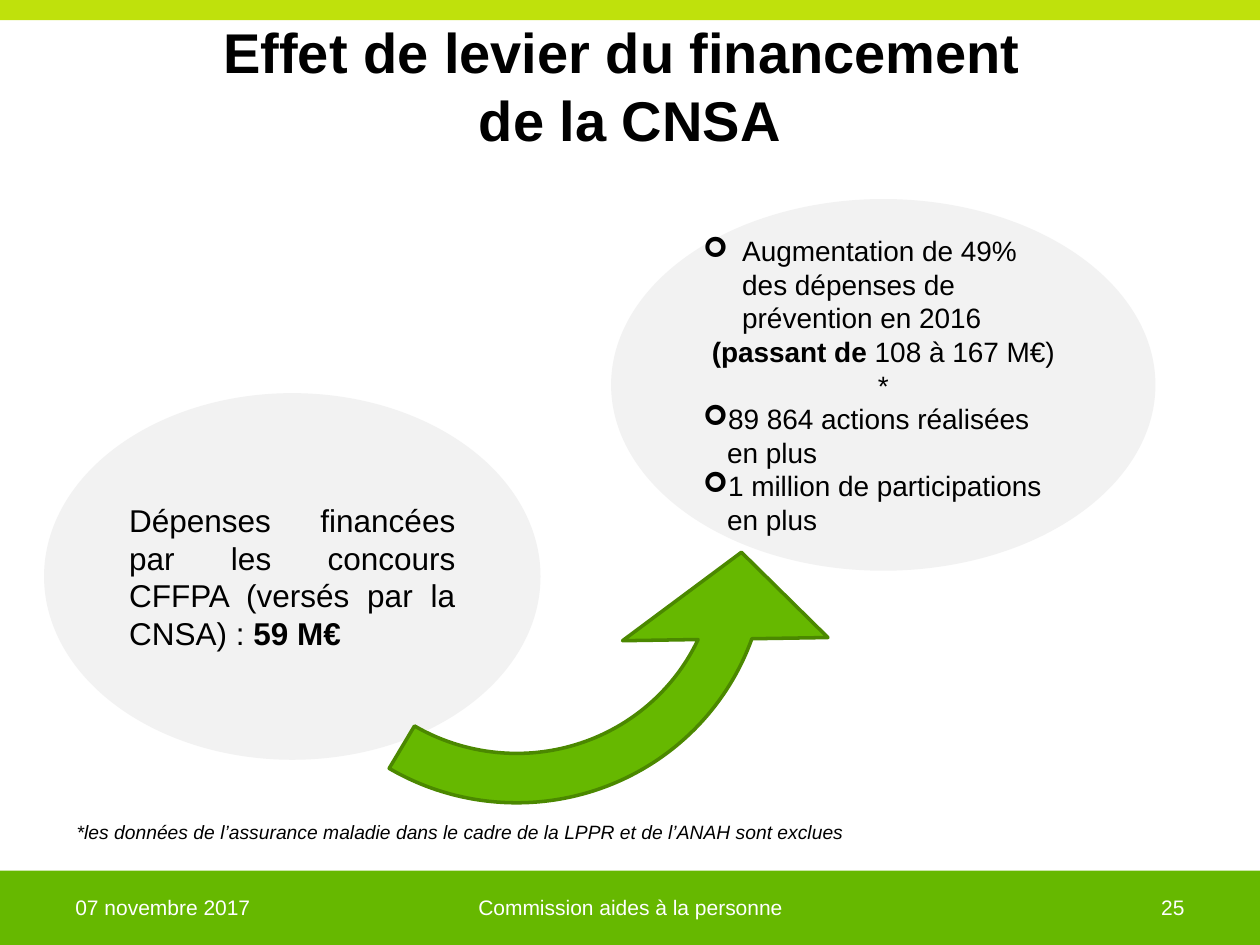
from lxml.etree import SubElement
from pptx import Presentation
from pptx.dml.color import RGBColor
from pptx.enum.shapes import MSO_SHAPE as Shape
from pptx.enum.text import MSO_ANCHOR as Anchor, PP_ALIGN as Align
from pptx.oxml.ns import qn
from pptx.util import Inches, Pt

LIME, GREEN, DARK = "BFE10C", "66B800", "4B8800"
GREY, BLACK, WHITE = "F2F2F2", "000000", "FFFFFF"


def color(code):
    return RGBColor.from_string(code)


def place(item, box):
    item.left, item.top, item.width, item.height = map(Inches, box)


def style(para, size, tone=BLACK, align=Align.LEFT, bold=None, italic=None):
    para.alignment = align
    for run in para.runs:
        font = run.font
        font.name, font.size = "Arial", Pt(size)
        font.color.rgb = color(tone)
        font.bold, font.italic = bold, italic


def add_shape(slide, kind, box, fill):
    shape = slide.shapes.add_shape(kind, *map(Inches, box))
    shape.shadow.inherit = False
    shape.fill.solid()
    shape.fill.fore_color.rgb = color(fill)
    shape.line.fill.background()
    return shape


def add_label(slide, box, text, size, **look):
    label = slide.shapes.add_textbox(*map(Inches, box))
    frame = label.text_frame
    frame.word_wrap = True
    frame.text = text
    style(frame.paragraphs[0], size, **look)


def add_bullet(para, indent):
    props = para._p.get_or_add_pPr()
    props.set("marL", str(Inches(indent)))
    props.set("indent", str(-Inches(indent)))
    SubElement(props, qn("a:buFont"), typeface="Wingdings")
    SubElement(props, qn("a:buChar"), char="➢")


def add_oval(slide, box, size, rows):
    """Each row holds its runs as (text, bold), its alignment and its bullet indent."""
    oval = add_shape(slide, Shape.OVAL, box, GREY)
    frame = oval.text_frame
    frame.word_wrap = True
    frame.vertical_anchor = Anchor.MIDDLE
    for i, (runs, align, indent) in enumerate(rows):
        para = frame.add_paragraph() if i else frame.paragraphs[0]
        for text, _ in runs:
            para.add_run().text = text
        style(para, size, align=align)
        for run, (_, bold) in zip(para.runs, runs):
            run.font.bold = bold
        if indent:
            add_bullet(para, indent)


def add_arrow(slide):
    arrow = add_shape(slide, Shape.CIRCULAR_ARROW, (1.49, 1.83, 5.21, 5.16), GREEN)
    for i, value in enumerate((0.076, 13.565, 206.383, 146.939, 0.158)):
        arrow.adjustments[i] = value
    arrow.rotation = 185.7
    arrow._element.spPr.find(qn("a:xfrm")).set("flipH", "1")
    arrow.line.color.rgb = color(DARK)
    arrow.line.width = Pt(2)


def set_title(slide, text):
    title = slide.shapes.title
    place(title, (0.5, 0.05, 9, 1.25))
    frame = title.text_frame
    frame.text = text
    frame.vertical_anchor = Anchor.MIDDLE
    style(frame.paragraphs[0], 32, align=Align.CENTER, bold=True)


def add_footer(slide):
    for left, width, text, align in (
        (0.5, 2.33, "07 novembre 2017", Align.LEFT),
        (3.42, 3.17, "Commission aides à la personne", Align.CENTER),
        (7.17, 2.33, "25", Align.RIGHT),
    ):
        add_label(slide, (left, 7.05, width, 0.3), text, 12, tone=WHITE, align=align)


def main():
    deck = Presentation()
    deck.slide_width, deck.slide_height = Inches(10), Inches(7.5)
    slide = deck.slides.add_slide(deck.slide_layouts[5])

    add_shape(slide, Shape.RECTANGLE, (0, 0, 10, 0.16), LIME)
    add_shape(slide, Shape.RECTANGLE, (0, 6.91, 10, 0.59), GREEN)
    set_title(slide, "Effet de levier du financement \vde la CNSA")
    add_footer(slide)

    add_oval(slide, (4.85, 1.58, 4.32, 2.95), 16, [
        ([("Augmentation de 49% des dépenses de prévention en 2016", False)],
         Align.LEFT, 0.31),
        ([("(passant de ", True), ("108 à 167 M€) *", False)], Align.CENTER, 0),
        ([("89 864 actions réalisées en plus", False)], Align.LEFT, 0.19),
        ([("1 million de participations en plus", False)], Align.LEFT, 0.19),
    ])
    add_oval(slide, (0.35, 3.12, 3.94, 2.91), 18, [
        ([("Dépenses financées par les concours CFFPA (versés par la CNSA) : ", False),
          ("59 M€", True)], Align.JUSTIFY, 0),
    ])
    add_arrow(slide)
    add_label(slide, (0.51, 6.46, 6.62, 0.29),
              "*les données de l’assurance maladie dans le cadre de la LPPR"
              " et de l’ANAH sont exclues", 11, italic=True)
    deck.save("out.pptx")


if __name__ == "__main__":
    main()
